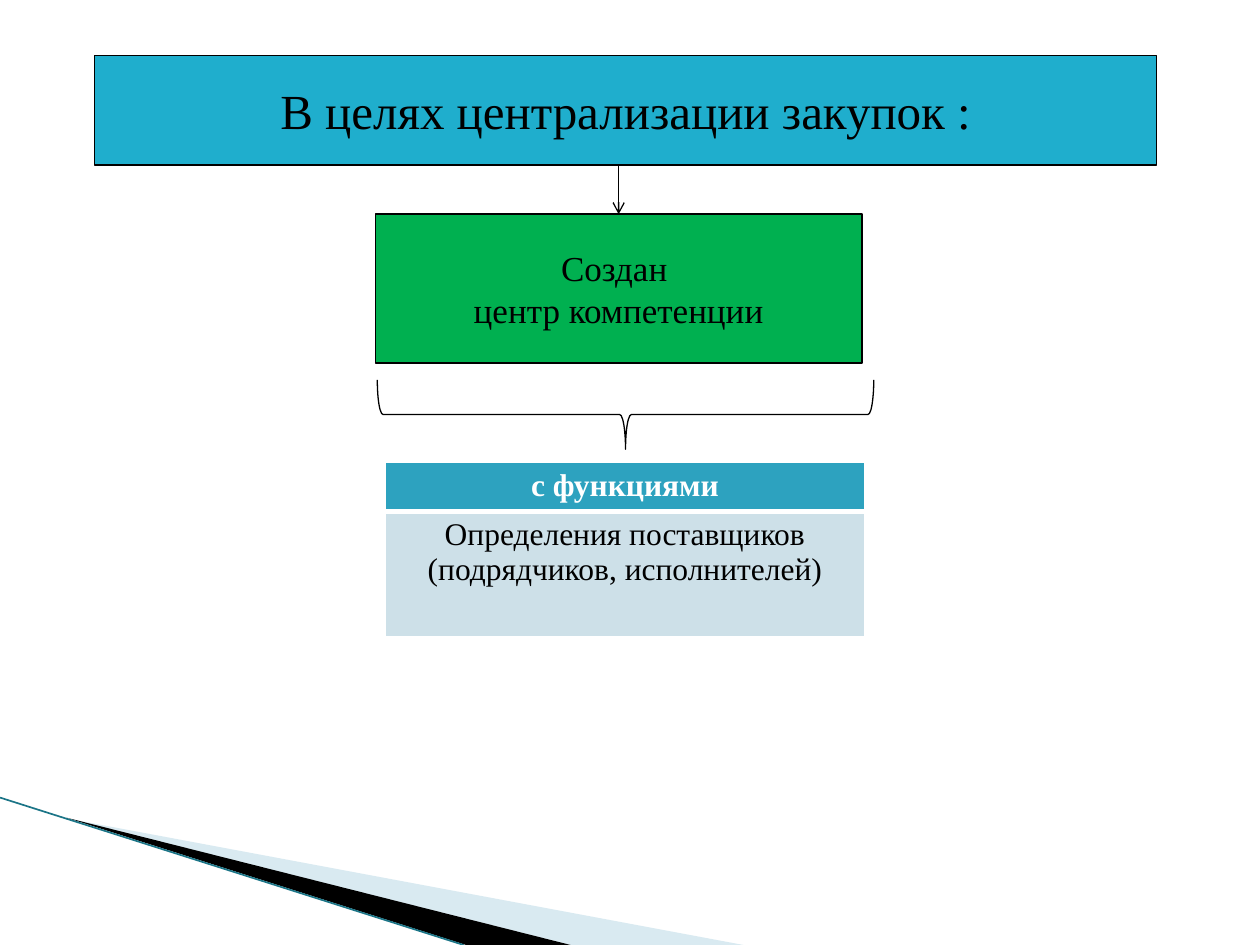
from pptx import Presentation
from pptx.dml.color import RGBColor
from pptx.enum.shapes import MSO_CONNECTOR as CONN, MSO_SHAPE as SHAPE
from pptx.enum.text import MSO_ANCHOR as ANCHOR, PP_ALIGN as ALIGN
from pptx.oxml.ns import qn
from pptx.util import Emu, Inches, Pt
from lxml.etree import SubElement

COLS, ROWS = 100, 75


def rgb(value):
    return RGBColor.from_string(value)


class Deck:
    font, black, white = "Times New Roman", "000000", "FFFFFF"

    def __init__(self):
        self.prs = Presentation()
        self.prs.slide_width, self.prs.slide_height = Inches(10), Inches(7.5)
        self.slide = self.prs.slides.add_slide(self.prs.slide_layouts[5])
        self.shapes = self.slide.shapes

    def grid(self, *values):
        """Turn alternating column and row counts into lengths."""
        units = self.prs.slide_width / COLS, self.prs.slide_height / ROWS
        return [Emu(round(v * units[i % 2])) for i, v in enumerate(values)]

    def paint(self, sp, fill=None, line=None, width=1):
        for part, color in ((sp.fill, fill), (sp.line.fill, line)):
            if color:
                part.solid()
                part.fore_color.rgb = rgb(color)
            else:
                part.background()
        if line:
            sp.line.width = Pt(width)

    def text(self, tf, lines, size, color=black, bold=False, anchor=ANCHOR.MIDDLE):
        tf.word_wrap = True
        style = {"name": self.font, "size": Pt(size), "bold": bold}
        for i, content in enumerate(lines):
            p = tf.add_paragraph() if i else tf.paragraphs[0]
            p.alignment = ALIGN.CENTER
            r = p.add_run()
            r.text = content
            for key, value in style.items():
                setattr(r.font, key, value)
            r.font.color.rgb = rgb(color)
        tf.vertical_anchor = anchor

    def title(self, box, content, size, fill):
        sp = self.shapes.title
        sp.left, sp.top, sp.width, sp.height = self.grid(*box)
        self.paint(sp, fill, self.black)
        self.text(sp.text_frame, [content], size)

    def shape(self, kind, box, fill=None, width=1, rotation=0):
        sp = self.shapes.add_shape(kind, *self.grid(*box))
        sp.shadow.inherit = False
        sp.rotation = rotation
        self.paint(sp, fill, self.black, width)
        return sp

    def box(self, box, lines, size, fill):
        sp = self.shape(SHAPE.RECTANGLE, box, fill)
        self.text(sp.text_frame, lines, size)
        return sp

    def wedge(self, points, fill):
        start, *rest = [self.grid(*point) for point in points]
        builder = self.shapes.build_freeform(*start)
        builder.add_line_segments(rest)
        sp = builder.convert_to_shape()
        sp.shadow.inherit = False
        self.paint(sp, fill)

    def line(self, ends, color, width, arrow=False):
        cx = self.shapes.add_connector(CONN.STRAIGHT, *self.grid(*ends))
        cx.line.color.rgb, cx.line.width = rgb(color), Pt(width)
        if arrow:
            ln = cx._element.spPr.find(qn("a:ln"))
            SubElement(ln, qn("a:tailEnd"), type="arrow")
        SubElement(cx._element.spPr, qn("a:effectLst"))
        return cx

    def border(self, cell, **widths):
        for side, width in widths.items():
            ln = SubElement(cell._tc.get_or_add_tcPr(), qn("a:ln" + side), w=str(int(Pt(width))))
            SubElement(SubElement(ln, qn("a:solidFill")), qn("a:srgbClr"), val=self.white)

    def table(self, box, heights, rows, size):
        table = self.shapes.add_table(len(rows), 1, *self.grid(*box)).table
        top = 1
        for i, (content, fill, color, bold, bottom) in enumerate(rows):
            table.rows[i].height = self.grid(0, heights[i])[1]
            cell = table.cell(i, 0)
            self.border(cell, L=1, R=1, T=top, B=bottom)
            top = bottom
            cell.fill.solid()
            cell.fill.fore_color.rgb = rgb(fill)
            self.text(cell.text_frame, [content], size, color, bold, ANCHOR.TOP)


def main():
    deck = Deck()

    # Corner decoration
    deck.wedge([(5.5, 65), (59, 75), (45.3, 75)], "D9EAF1")
    deck.wedge([(5.3, 64.9), (45.3, 75), (37, 75)], deck.black)
    deck.line((0, 63.3, 36.8, 75), "1B7587", 0.95)

    # Heading and the centre it leads to
    deck.title((7.5, 4.4, 84.3, 8.7), "В целях централизации закупок :", 28, "1FAECD")
    centre = deck.box((29.8, 17, 38.6, 11.8), ["Создан ", "центр компетенции"], 20, "00B050")
    arrow = deck.line((49.1, 13.1, 49.1, 17), deck.black, 0.75, arrow=True)
    arrow.end_connect(centre, 0)

    # Brace and functions
    deck.shape(SHAPE.LEFT_BRACE, (46.9, 13.2, 5.5, 39.4), width=0.75, rotation=270)
    deck.table((30.6, 36.7, 38, 13.8), (3.9, 9.9), [
        ("с функциями", "2DA2BF", deck.white, True, 3),
        ("Определения поставщиков (подрядчиков, исполнителей)",
         "CDE0E8", deck.black, False, 1),
    ], 18)

    deck.prs.save("out.pptx")


if __name__ == "__main__":
    main()
